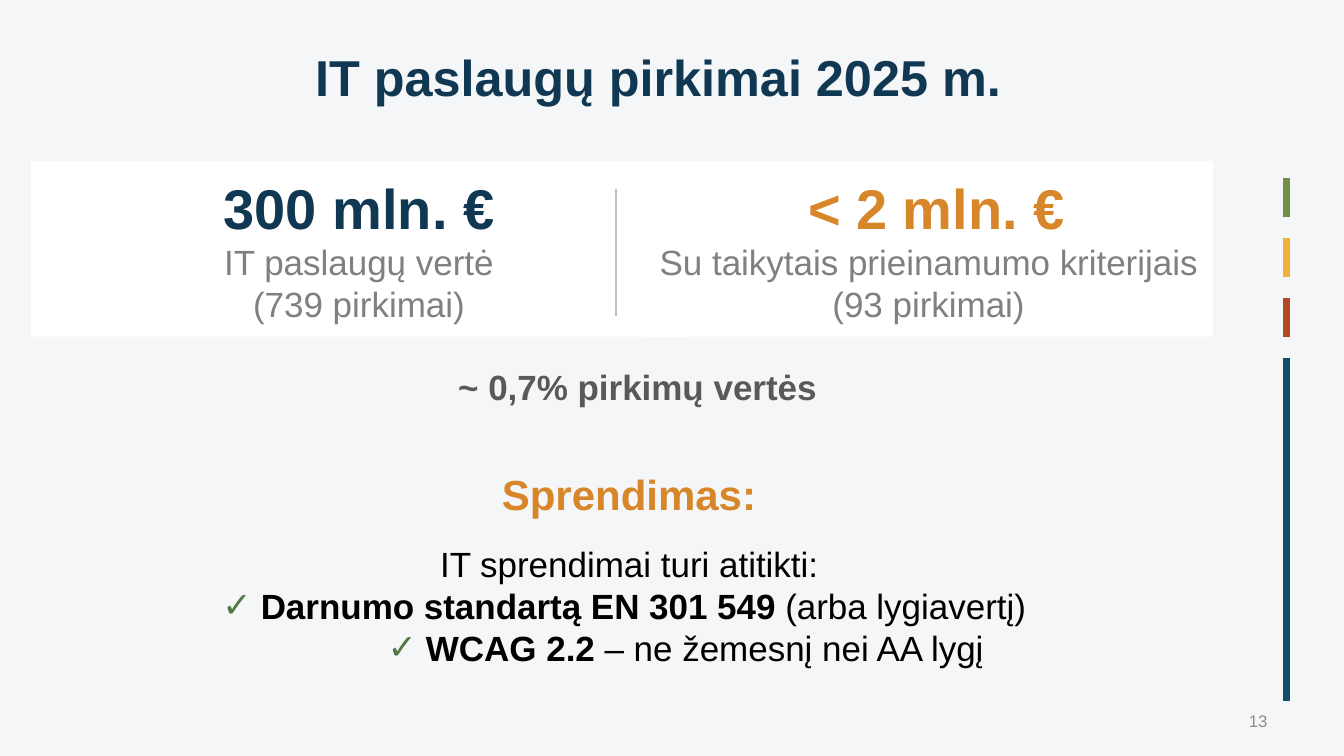
from dataclasses import dataclass

from lxml import etree
from pptx import Presentation
from pptx.dml.color import RGBColor
from pptx.enum.shapes import MSO_CONNECTOR, MSO_SHAPE
from pptx.enum.text import MSO_ANCHOR, MSO_AUTO_SIZE, PP_ALIGN
from pptx.oxml.ns import qn
from pptx.util import Inches, Pt

CENTER, RIGHT = PP_ALIGN.CENTER, PP_ALIGN.RIGHT
TOP, MIDDLE = MSO_ANCHOR.TOP, MSO_ANCHOR.MIDDLE
NO_AUTOFIT = MSO_AUTO_SIZE.NONE
RECTANGLE = MSO_SHAPE.RECTANGLE
STRAIGHT = MSO_CONNECTOR.STRAIGHT


@dataclass(frozen=True)
class Theme:
    font: str = "Arial"
    background: str = "F5F6F8"
    card: str = "FFFFFF"
    navy: str = "113853"
    orange: str = "D78629"
    caption: str = "808080"
    share: str = "595959"
    text: str = "000000"
    check: str = "547949"
    divider: str = "BFBFBF"
    number: str = "8C8C8C"
    title_size: int = 36
    figure_size: int = 40
    heading_size: int = 30
    body_size: int = 25
    number_size: int = 12


THEME = Theme()

TITLE = "IT paslaugų pirkimai 2025 m."
CARDS = [
    (0.31, 6.5, THEME.navy, "300 mln. €", ["IT paslaugų vertė", "(739 pirkimai)"]),
    (6.39, 5.64, THEME.orange, " < 2 mln. €",
     ["Su taikytais prieinamumo kriterijais", "(93 pirkimai)"]),
]
SHARE = "~ 0,7% pirkimų vertės "
HEADING = "Sprendimas:"
LEAD = "IT sprendimai turi atitikti:"
REQUIREMENTS = [
    (0.38, "Darnumo standartą EN 301 549 ", "(arba lygiavertį) "),
    (1.5, "WCAG 2.2 ", "– ne žemesnį nei AA lygį"),
]
SLIDE_NUMBER = "13"
BARS = [("728E4B", 0.38), ("F0B13A", 0.38), ("B34825", 0.38), ("134E69", 3.4)]

CARD_TOP, CARD_HEIGHT = 1.6, 1.74
BAR_LEFT, BAR_TOP, BAR_PITCH = 12.76, 1.77, 0.595
HANGING = 0.38


def color(value):
    return RGBColor.from_string(value)


def place(shape, left, top, width, height):
    shape.left, shape.top = Inches(left), Inches(top)
    shape.width, shape.height = Inches(width), Inches(height)


def prepare(frame, anchor, margins=True):
    frame.word_wrap = True
    frame.auto_size = NO_AUTOFIT
    frame.vertical_anchor = anchor
    if not margins:
        frame.margin_left = frame.margin_right = 0
        frame.margin_top = frame.margin_bottom = 0


def write(frame, spans, size, ink, bold=False, align=CENTER, before=0, check_indent=None):
    para = frame.paragraphs[0]
    if para.runs:
        para = frame.add_paragraph()
    properties = para._p.get_or_add_pPr()
    indent = 0 if check_indent is None else HANGING
    properties.set("marL", str(Inches(check_indent or 0)))
    properties.set("indent", str(-Inches(indent)))
    if check_indent is None:
        etree.SubElement(properties, qn("a:buNone"))
    else:
        bullet_color = etree.SubElement(properties, qn("a:buClr"))
        etree.SubElement(bullet_color, qn("a:srgbClr")).set("val", THEME.check)
        etree.SubElement(properties, qn("a:buChar")).set("char", "✓")
    para.alignment = align
    para.space_before = Pt(before)
    para.font.name = THEME.font
    para.font.size = Pt(size)
    para.font.color.rgb = color(ink)
    para.font.bold = bold
    for text, strong in spans:
        span = para.add_run()
        span.text = text
        if strong:
            span.font.bold = True


def add_text(slide, area, text, size, ink, bold=False, align=CENTER, anchor=TOP):
    box = slide.shapes.add_textbox(*map(Inches, area))
    prepare(box.text_frame, anchor)
    write(box.text_frame, [(text, False)], size, ink, bold, align)


def add_vertical(shapes, left, top, length, ink, weight):
    line = shapes.add_connector(
        STRAIGHT, Inches(left), Inches(top), Inches(left), Inches(top + length))
    line.line.color.rgb = color(ink)
    line.line.width = Pt(weight)
    etree.SubElement(line._element.spPr, qn("a:effectLst"))


def add_card(slide, left, width, ink, figure, captions):
    card = slide.shapes.add_shape(
        RECTANGLE, *map(Inches, (left, CARD_TOP, width, CARD_HEIGHT)))
    card.shadow.inherit = False
    card.fill.solid()
    card.fill.fore_color.rgb = color(THEME.card)
    card.line.fill.background()
    prepare(card.text_frame, MIDDLE)
    write(card.text_frame, [(figure, False)], THEME.figure_size, ink, True)
    for caption in captions:
        write(card.text_frame, [(caption, False)], THEME.body_size, THEME.caption)


def add_solution(body):
    place(body, 1.01, 4.33, 10.46, 2.62)
    frame = body.text_frame
    prepare(frame, MIDDLE)
    write(frame, [(HEADING, False)], THEME.heading_size, THEME.orange, True)
    write(frame, [(LEAD, False)], THEME.body_size, THEME.text, before=17)
    for indent, strong, rest in REQUIREMENTS:
        write(frame, [(strong, True), (rest, False)], THEME.body_size, THEME.text,
              check_indent=indent)


def main():
    deck = Presentation()
    deck.slide_width, deck.slide_height = Inches(13.33), Inches(7.5)
    page = deck.slides.add_slide(deck.slide_layouts[1])
    page.background.fill.solid()
    page.background.fill.fore_color.rgb = color(THEME.background)

    title = page.shapes.title
    place(title, 0.31, 0.46, 12.44, 0.44)
    prepare(title.text_frame, TOP, margins=False)
    write(title.text_frame, [(TITLE, False)], THEME.title_size, THEME.navy, True)

    bars = page.shapes.add_group_shape()
    for index, (ink, length) in enumerate(BARS):
        add_vertical(bars.shapes, BAR_LEFT, BAR_TOP + index * BAR_PITCH, length, ink, 4.5)

    for card in CARDS:
        add_card(page, *card)
    add_vertical(page.shapes, 6.11, 1.88, 1.26, THEME.divider, 1.5)
    add_text(page, (1.97, 3.58, 8.8, 0.52), SHARE, THEME.body_size, THEME.share, True)
    add_solution(page.placeholders[1])
    add_text(page, (9.56, 6.95, 3.11, 0.4), SLIDE_NUMBER, THEME.number_size,
             THEME.number, align=RIGHT, anchor=MIDDLE)
    deck.save("out.pptx")


if __name__ == "__main__":
    main()
